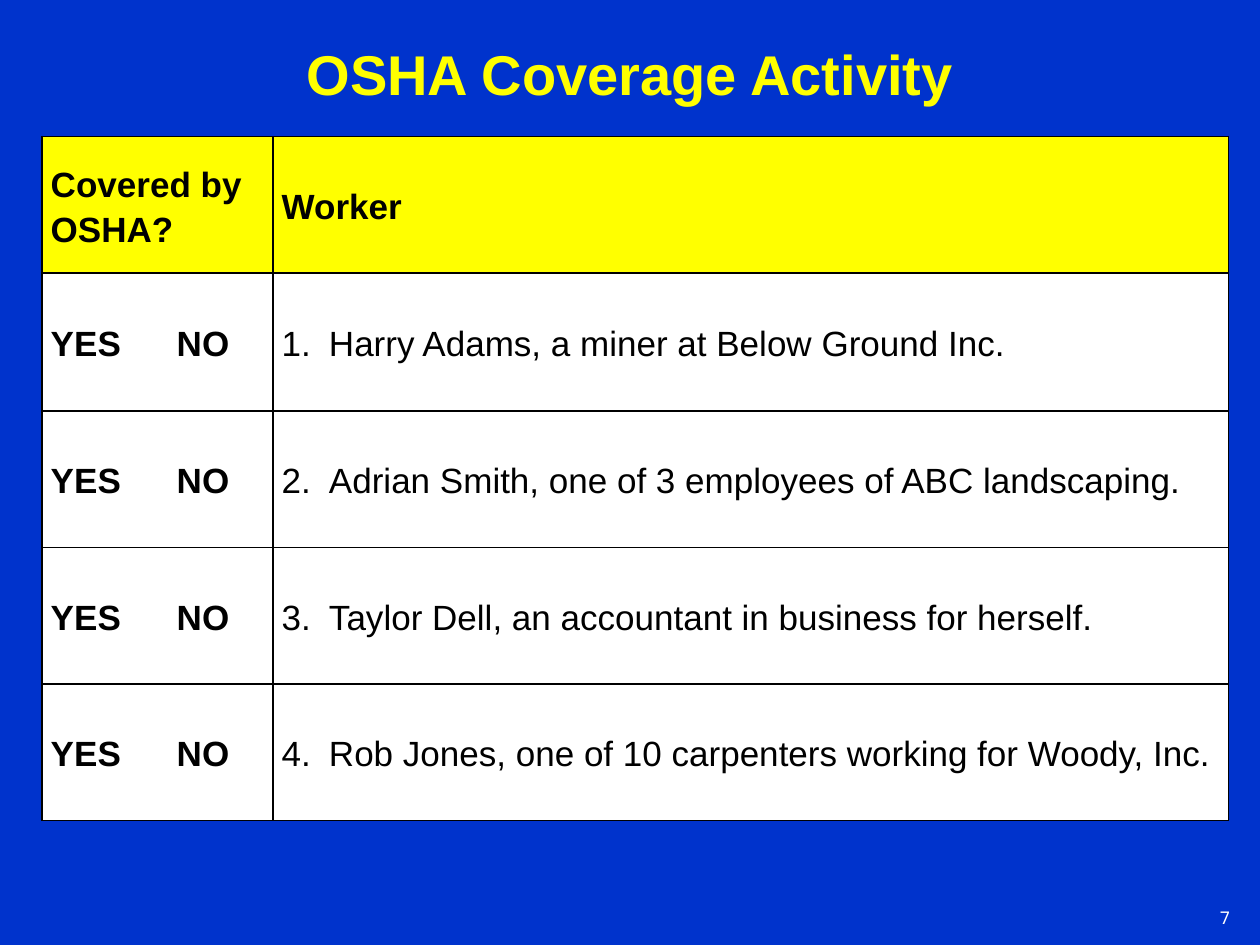
from lxml.etree import SubElement
from pptx import Presentation
from pptx.dml.color import RGBColor
from pptx.enum.text import MSO_ANCHOR, PP_ALIGN
from pptx.oxml.ns import qn
from pptx.util import Pt

BLUE, YELLOW, WHITE, BLACK = "0033CC", "FFFF00", "FFFFFF", "000000"
HEADINGS = ("Covered by OSHA?", "Worker")
WORKERS = (
    "Harry Adams, a miner at Below Ground Inc.",
    "Adrian Smith, one of 3 employees of ABC landscaping.",
    "Taylor Dell, an accountant in business for herself.",
    "Rob Jones, one of 10 carpenters working for Woody, Inc.",
)


def paint(color_format, color):
    color_format.rgb = RGBColor.from_string(color)


def write(para, text, size=20, color=BLACK, bold=False, font="Arial",
          align=PP_ALIGN.LEFT, spacing=None, number=None, tab=None):
    """Fill a paragraph, optionally with an automatic number or a left tab stop."""
    properties = para._p.get_or_add_pPr()
    if number:
        properties.set("marL", str(Pt(27)))
        properties.set("indent", str(-Pt(27)))
        SubElement(properties, qn("a:buFont"), typeface="+mj-lt")
        SubElement(properties, qn("a:buAutoNum"), type="arabicPeriod", startAt=str(number))
    if tab:
        tabs = SubElement(properties, qn("a:tabLst"))
        SubElement(tabs, qn("a:tab"), pos=str(Pt(tab)), algn="l")
    para.alignment = align
    if spacing:
        para.line_spacing = spacing
    span = para.add_run()
    span.text = text
    span.font.size = Pt(size)
    span.font.bold = bold
    span.font.name = font
    paint(span.font.color, color)


def draw_borders(cell, color, width):
    properties = cell._tc.get_or_add_tcPr()
    for side in ("lnL", "lnR", "lnT", "lnB"):
        line = SubElement(properties, qn(f"a:{side}"), w=str(Pt(width)))
        fill = SubElement(line, qn("a:solidFill"))
        SubElement(fill, qn("a:srgbClr"), val=color)


class SlideBuilder:
    def __init__(self, deck, background):
        self.page = deck.slides.add_slide(deck.slide_layouts[6])
        self.page.background.fill.solid()
        paint(self.page.background.fill.fore_color, background)

    def text(self, content, left, top, width, height, anchor, **style):
        box = self.page.shapes.add_textbox(Pt(left), Pt(top), Pt(width), Pt(height))
        frame = box.text_frame
        frame.word_wrap = True
        frame.vertical_anchor = anchor
        write(frame.paragraphs[0], content, **style)

    def table(self, left, top, widths, heights):
        table = self.page.shapes.add_table(
            len(heights), len(widths), Pt(left), Pt(top),
            Pt(sum(widths)), Pt(sum(heights))).table
        for column, width in zip(table.columns, widths):
            column.width = Pt(width)
        for row, height in zip(table.rows, heights):
            row.height = Pt(height)
        return table

    def cell(self, cell, content, fill, **style):
        cell.margin_left = cell.margin_right = Pt(5)
        cell.margin_top = cell.margin_bottom = 0
        cell.vertical_anchor = MSO_ANCHOR.MIDDLE
        draw_borders(cell, BLACK, 1)
        cell.fill.solid()
        paint(cell.fill.fore_color, fill)
        write(cell.text_frame.paragraphs[0], content, **style)


def main():
    deck = Presentation()
    deck.slide_width, deck.slide_height = Pt(720), Pt(540)
    slide = SlideBuilder(deck, BLUE)
    slide.text("OSHA Coverage Activity", 12, 12, 696, 60, MSO_ANCHOR.MIDDLE,
               size=32, color=YELLOW, bold=True, align=PP_ALIGN.CENTER)
    slide.text("7", 681, 505, 29, 29, MSO_ANCHOR.BOTTOM, size=10, color=WHITE,
               font="Noto Sans Mono", align=PP_ALIGN.RIGHT)

    table = slide.table(24, 78, (132, 546), (78, 79, 78, 78, 78))
    for column, heading in enumerate(HEADINGS):
        slide.cell(table.cell(0, column), heading, YELLOW, bold=True, spacing=1.15)
    for number, worker in enumerate(WORKERS, start=1):
        slide.cell(table.cell(number, 0), "YES\tNO", WHITE, bold=True, spacing=1.1, tab=72)
        slide.cell(table.cell(number, 1), worker, WHITE, spacing=1.1, number=number)
    deck.save("out.pptx")


if __name__ == "__main__":
    main()
